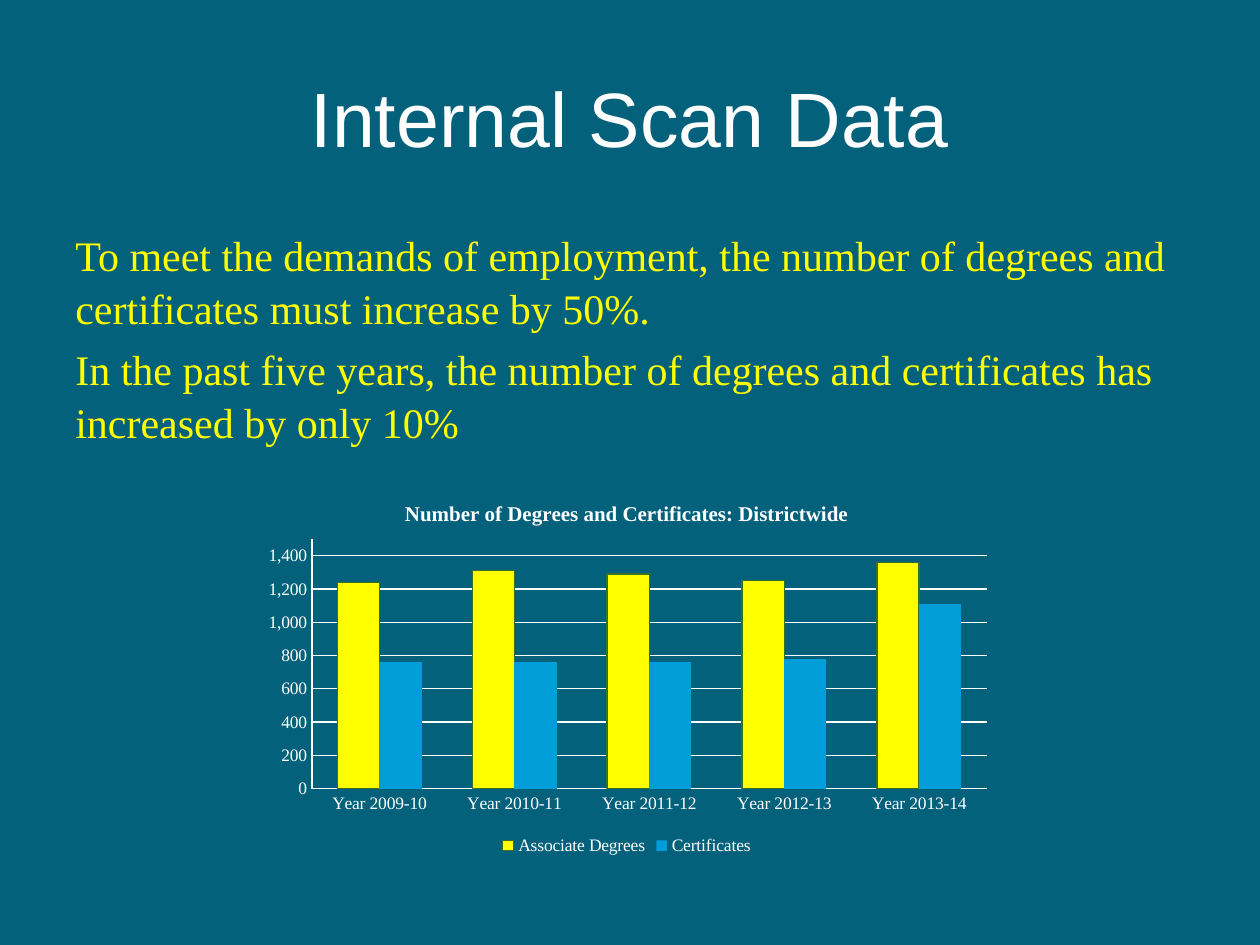
from dataclasses import dataclass

from lxml import etree
from pptx import Presentation
from pptx import util as u
from pptx.chart.data import CategoryChartData
from pptx.dml.color import RGBColor
from pptx.enum import chart as ch
from pptx.enum import text
from pptx.oxml import parse_xml
from pptx.oxml.ns import nsdecls

TEAL = RGBColor(0x04, 0x61, 0x7B)
WHITE = RGBColor(0xFF, 0xFF, 0xFF)
YELLOW = RGBColor(0xFF, 0xFF, 0x00)
BLUE = RGBColor(0x00, 0x9D, 0xD9)
OLIVE = RGBColor(0x38, 0x70, 0x26)
SANS, SERIF = "Arial", "Times New Roman"
WIDTH, HEIGHT = u.Inches(10), u.Inches(7.5)


@dataclass
class Box:
    """Place on the slide, in inches."""
    left: float
    top: float
    width: float
    height: float

    def lengths(self) -> list[u.Length]:
        return [u.Inches(v) for v in (self.left, self.top, self.width, self.height)]


@dataclass
class Award:
    name: str
    counts: tuple[int, ...]
    fill: RGBColor
    outline: RGBColor | None = None


TITLE_BOX = Box(0.5, 0.3, 9, 1.25)
BODY_BOX = Box(0.5, 1.75, 9, 4.95)
CHART_BOX = Box(2, 3.83, 5.95, 3)
PLOT_SHARES = {"x": 0.08, "y": 0.15, "w": 0.9, "h": 0.66}

STATEMENTS = (
    "To meet the demands of employment, the number of degrees and "
    "certificates must increase by 50%.",
    "In the past five years, the number of degrees and certificates has "
    "increased by only 10%",
)
YEARS = [f"Year {year}-{year - 1999}" for year in range(2009, 2014)]
AWARDS = (
    Award("Associate Degrees", (1240, 1310, 1290, 1250, 1360), YELLOW, OLIVE),
    Award("Certificates", (760, 760, 760, 780, 1110), BLUE),
)


def style_font(font, face: str, size: float, color: RGBColor, bold: bool = False) -> None:
    font.name, font.size, font.bold = face, u.Pt(size), bold
    font.color.rgb = color


def style_line(line) -> None:
    line.color.rgb = WHITE
    line.width = u.Pt(0.75)


def add_title(slide, wording: str) -> None:
    title = slide.shapes.title
    title.left, title.top, title.width, title.height = TITLE_BOX.lengths()
    frame = title.text_frame
    frame.text = wording
    frame.vertical_anchor = text.MSO_ANCHOR.MIDDLE
    heading = frame.paragraphs[0]
    heading.alignment = text.PP_ALIGN.CENTER
    style_font(heading.font, SANS, 44, WHITE)


def add_statements(slide) -> None:
    frame = slide.shapes.add_textbox(*BODY_BOX.lengths()).text_frame
    frame.word_wrap = True
    frame.text = "\n".join(STATEMENTS)
    for statement in frame.paragraphs:
        statement.space_before = u.Pt(4.8)
        statement.line_spacing = 1.05
        style_font(statement.font, SERIF, 24, YELLOW)


def fix_plot_area(chart) -> None:
    """Set the inner plot area as shares of the chart's size."""
    plot_area = chart.plots[0]._element.getparent()
    for old in plot_area.findall("{*}layout"):
        plot_area.remove(old)
    layout = parse_xml(f"<c:layout {nsdecls('c')}><c:manualLayout>"
                       '<c:layoutTarget val="inner"/><c:xMode val="edge"/>'
                       '<c:yMode val="edge"/></c:manualLayout></c:layout>')
    manual = layout[0]
    for side, share in PLOT_SHARES.items():
        tag = f"{{{etree.QName(manual).namespace}}}{side}"
        etree.SubElement(manual, tag).set("val", str(share))
    plot_area.insert(0, layout)


def add_awards_chart(slide) -> None:
    data = CategoryChartData(number_format="#,##0")
    data.categories = YEARS
    for award in AWARDS:
        data.add_series(award.name, award.counts)
    chart = slide.shapes.add_chart(
        ch.XL_CHART_TYPE.COLUMN_CLUSTERED, *CHART_BOX.lengths(), data).chart
    style_font(chart.font, SERIF, 10, WHITE)

    # Chart title and legend
    chart.has_title = True
    heading = chart.chart_title.text_frame
    heading.text = "Number of Degrees and Certificates: Districtwide"
    style_font(heading.paragraphs[0].font, SERIF, 12, WHITE, bold=True)
    chart.chart_title.include_in_layout = False
    chart.has_legend = True
    chart.legend.position = ch.XL_LEGEND_POSITION.BOTTOM
    chart.legend.include_in_layout = False

    # Axes
    counts = chart.value_axis
    counts.minimum_scale, counts.maximum_scale, counts.major_unit = 0, 1500, 200
    counts.tick_labels.number_format = "#,##0"
    counts.tick_labels.number_format_is_linked = False
    style_line(counts.major_gridlines.format.line)
    for axis in (chart.category_axis, counts):
        axis.major_tick_mark = axis.minor_tick_mark = ch.XL_TICK_MARK.NONE
        style_line(axis.format.line)

    # Columns
    columns = chart.plots[0]
    columns.gap_width, columns.overlap = 120, 0
    columns.vary_by_categories = False
    for award, series in zip(AWARDS, columns.series):
        series.format.fill.solid()
        series.format.fill.fore_color.rgb = award.fill
        if award.outline is None:
            series.format.line.fill.background()
        else:
            series.format.line.color.rgb = award.outline
            series.format.line.width = u.Pt(0.75)
    fix_plot_area(chart)


def main() -> None:
    deck = Presentation()
    deck.slide_width, deck.slide_height = WIDTH, HEIGHT
    slide = deck.slides.add_slide(deck.slide_layouts.get_by_name("Title Only"))
    slide.background.fill.solid()
    slide.background.fill.fore_color.rgb = TEAL
    add_title(slide, "Internal Scan Data")
    add_statements(slide)
    add_awards_chart(slide)
    deck.save("out.pptx")


if __name__ == "__main__":
    main()
